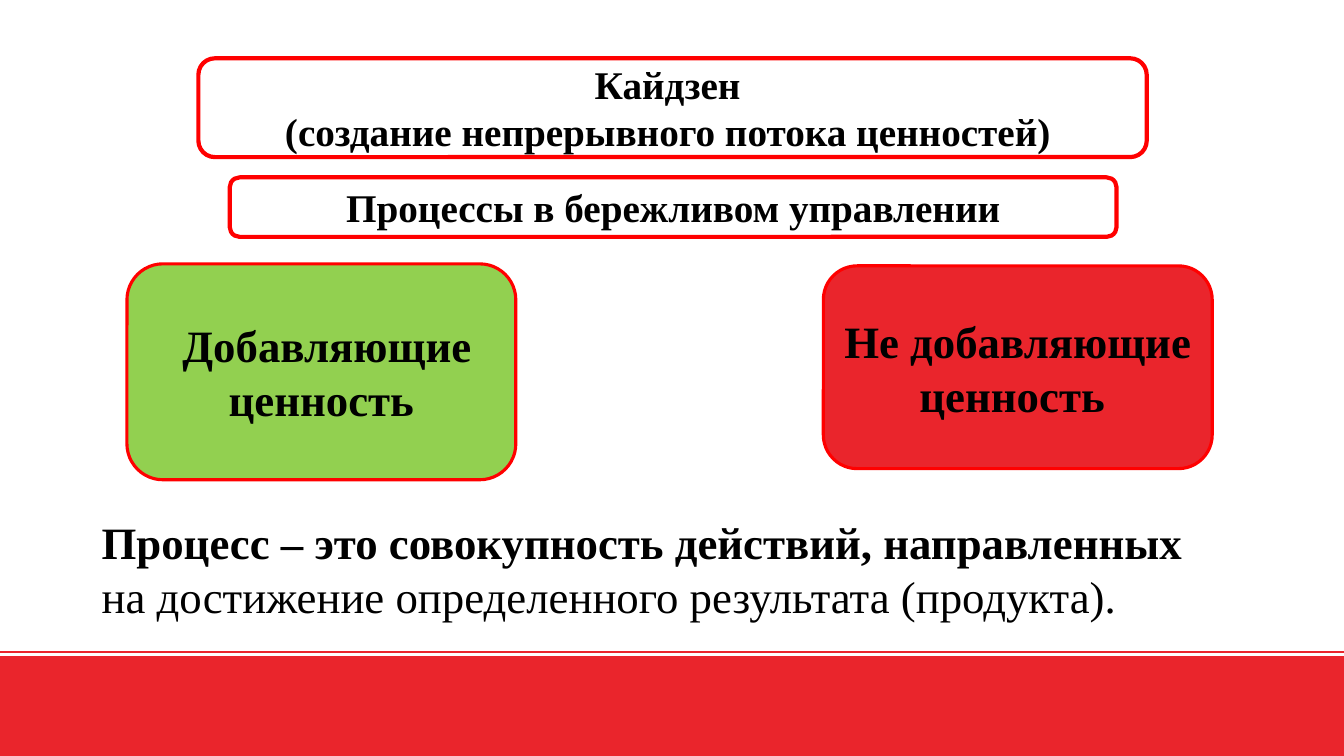
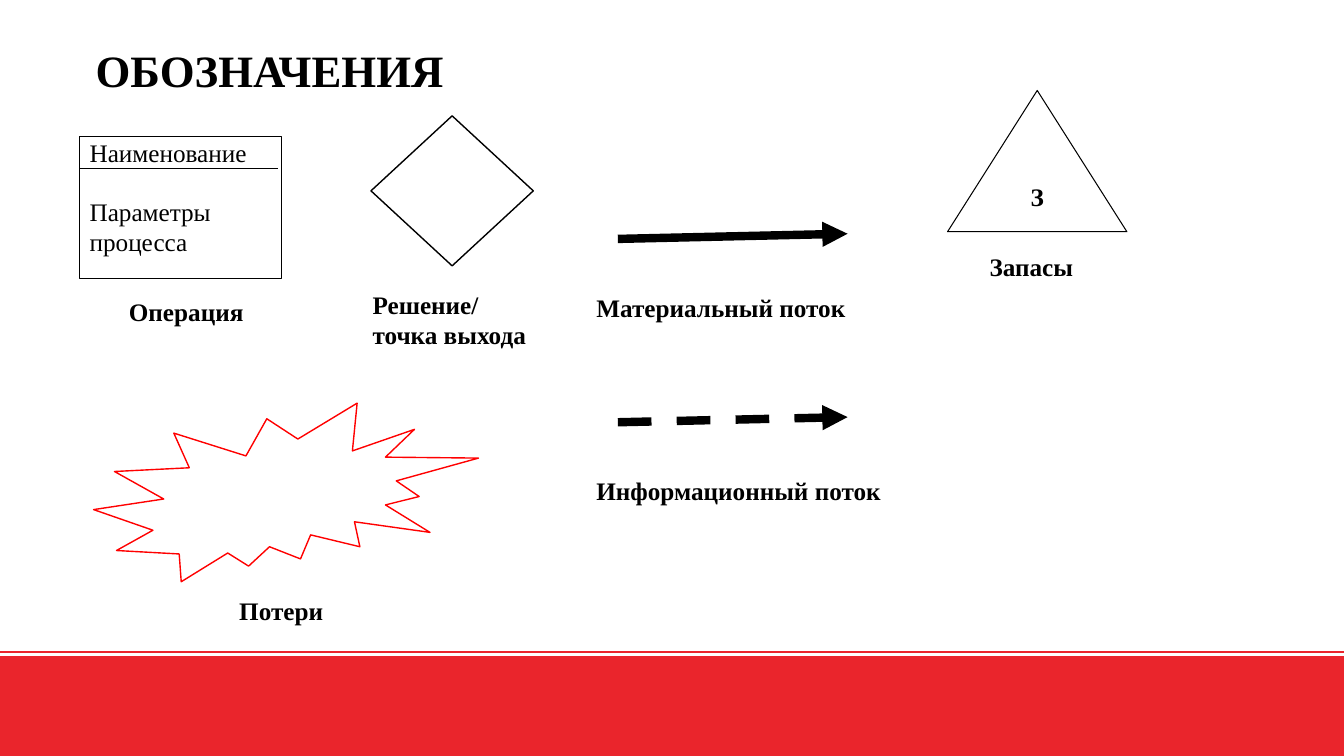
from dataclasses import dataclass
from typing import Any, NamedTuple, Optional

from lxml.etree import SubElement
from pptx import Presentation
from pptx.dml.color import RGBColor
from pptx.enum.dml import MSO_LINE
from pptx.enum.shapes import MSO_CONNECTOR, MSO_SHAPE
from pptx.enum.text import MSO_ANCHOR, MSO_AUTO_SIZE, PP_ALIGN
from pptx.oxml.ns import qn
from pptx.util import Cm, Pt


# Theme
@dataclass(frozen=True)
class Theme:
    font: str = "Times New Roman"
    brand: str = "EA252C"
    accent: str = "FF0000"
    green: str = "92D050"
    black: str = "000000"
    white: str = "FFFFFF"
    big: int = 32
    medium: int = 28
    small: int = 18


T = Theme()
WIDTH, HEIGHT = 33.87, 19.05


# Repeated elements; lengths in centimetres, line widths and type in points
class Rect(NamedTuple):
    left: float
    top: float
    width: float
    height: float


class Para(NamedTuple):
    text: str
    bold: bool = True
    before: float = 0


@dataclass(frozen=True)
class Text:
    paras: tuple[Para, ...]
    size: int = T.small
    align: PP_ALIGN = PP_ALIGN.LEFT
    wrap: bool = False


@dataclass(frozen=True)
class Figure:
    kind: MSO_SHAPE
    rect: Rect
    line: str
    weight: float
    fill: Optional[str] = None
    text: Optional[Text] = None
    frame: tuple[tuple[str, Any], ...] = (("vertical_anchor", MSO_ANCHOR.MIDDLE),)


@dataclass(frozen=True)
class Label:
    rect: Rect
    text: Text


@dataclass(frozen=True)
class Line:
    start: tuple[float, float]
    end: tuple[float, float]
    color: str
    weight: float
    dash: Optional[MSO_LINE] = None
    arrow: bool = False


# Drawing functions
def set_all(target: Any, values: dict[str, Any]) -> None:
    for name, value in values.items():
        setattr(target, name, value)


def write(tf: Any, text: Text) -> None:
    tf.word_wrap = text.wrap
    for i, para in enumerate(text.paras):
        p = tf.add_paragraph() if i else tf.paragraphs[0]
        set_all(p, {"alignment": text.align, "space_before": Pt(para.before)})
        r = p.add_run()
        r.text = para.text
        set_all(r.font, {"name": T.font, "size": Pt(text.size), "bold": para.bold})
        r.font.color.rgb = RGBColor.from_string(T.black)


def draw_figure(shapes: Any, fig: Figure) -> None:
    sp = shapes.add_shape(fig.kind, *map(Cm, fig.rect))
    sp.shadow.inherit = False
    if fig.fill:
        sp.fill.solid()
        sp.fill.fore_color.rgb = RGBColor.from_string(fig.fill)
    else:
        sp.fill.background()
    sp.line.color.rgb = RGBColor.from_string(fig.line)
    sp.line.width = Pt(fig.weight)
    if fig.text:
        set_all(sp.text_frame, dict(fig.frame))
        write(sp.text_frame, fig.text)


def draw_label(shapes: Any, label: Label) -> None:
    tf = shapes.add_textbox(*map(Cm, label.rect)).text_frame
    write(tf, label.text)
    tf.auto_size = MSO_AUTO_SIZE.SHAPE_TO_FIT_TEXT


def draw_line(shapes: Any, line: Line) -> None:
    ends = map(Cm, line.start + line.end)
    cxn = shapes.add_connector(MSO_CONNECTOR.STRAIGHT, *ends)
    cxn.line.color.rgb = RGBColor.from_string(line.color)
    cxn.line.width = Pt(line.weight)
    if line.dash:
        cxn.line.dash_style = line.dash
    sp_pr = cxn._element.spPr
    if line.arrow:
        SubElement(sp_pr.find(qn("a:ln")), qn("a:tailEnd"), type="triangle")
    SubElement(sp_pr, qn("a:effectLst"))


DRAW = {Figure: draw_figure, Label: draw_label, Line: draw_line}


def draw(shapes: Any, *parts: Any) -> None:
    for part in parts:
        DRAW[type(part)](shapes, part)


def new_slide(prs: Any) -> Any:
    """Add a blank slide with the shared footer band."""
    s = prs.slides.add_slide(prs.slide_layouts[6])
    draw(
        s.shapes,
        Line((0, 16.43), (WIDTH, 16.43), T.brand, 1.5),
        Figure(MSO_SHAPE.RECTANGLE, Rect(0, 16.54, WIDTH, 2.51), T.brand, 1, T.brand),
    )
    return s


def rounded(rect: Rect, weight: float, size: int, *lines: str,
            fill: Optional[str] = None) -> Figure:
    text = Text(tuple(map(Para, lines)), size, PP_ALIGN.CENTER, wrap=True)
    return Figure(MSO_SHAPE.ROUNDED_RECTANGLE, rect, T.accent, weight, fill, text)


def caption(rect: Rect, *lines: str, size: int = T.small) -> Label:
    return Label(rect, Text(tuple(map(Para, lines)), size))


# Slide 1: processes
def processes_slide(prs: Any) -> None:
    s = new_slide(prs)
    definition = Text(
        (Para("Процесс – это совокупность действий, направленных"),
         Para("на достижение определенного результата (продукта).", bold=False)),
        T.big, wrap=True)
    draw(
        s.shapes,
        rounded(Rect(5, 1.47, 23.9, 2.49), 3, T.medium,
                "Кайдзен ", "(создание непрерывного потока ценностей) "),
        rounded(Rect(5.79, 4.47, 22.35, 1.5), 3, T.medium,
                "Процессы в бережливом управлении"),
        rounded(Rect(3.2, 6.65, 9.8, 5.44), 2.25, T.big,
                " Добавляющие ценность", fill=T.green),
        rounded(Rect(20.75, 6.7, 9.8, 5.11), 2.25, T.big,
                "Не добавляющие ценность ", fill=T.brand),
        Label(Rect(2.31, 12.85, 30.6, 3), definition),
    )


# Slide 2: legend of symbols
def legend_slide(prs: Any) -> None:
    s = new_slide(prs)
    draw(s.shapes, caption(Rect(2.16, 0.94, 9.32, 1.63), "ОБОЗНАЧЕНИЯ", size=T.big))

    # Operation: box with a header rule
    operation = Text((Para("Наименование", False), Para("Параметры", False, 21),
                      Para("процесса", False)))
    draw(
        s.shapes.add_group_shape().shapes,
        Figure(MSO_SHAPE.RECTANGLE, Rect(2.01, 3.45, 5.08, 3.56), T.black, 0.75,
               T.white, operation,
               (("vertical_anchor", MSO_ANCHOR.TOP), ("margin_top", 0))),
        Line((2.01, 4.24), (7.01, 4.24), T.black, 0.75),
    )

    # Stock, decision and loss symbols
    stock = Text((Para("З"),), align=PP_ALIGN.CENTER)
    draw(
        s.shapes,
        caption(Rect(3, 7.34, 3.43, 1.02), "Операция"),
        Figure(MSO_SHAPE.ISOSCELES_TRIANGLE, Rect(23.88, 2.28, 4.52, 3.56),
               T.black, 0.75, T.white, stock),
        caption(Rect(24.69, 6.2, 2.64, 1.04), "Запасы"),
        Figure(MSO_SHAPE.FLOWCHART_DECISION, Rect(9.35, 2.92, 4.09, 3.78), T.black, 1),
        caption(Rect(9.14, 7.16, 4.42, 1.8), "Решение/", "точка выхода"),
        Figure(MSO_SHAPE.EXPLOSION2, Rect(2.36, 10.16, 9.7, 4.5), T.accent, 1),
        caption(Rect(5.78, 14.88, 2.67, 1.02), "Потери"),
    )

    # Flows: arrow with its caption below
    flows = (("Материальный поток", 6.86, None),
             ("Информационный поток", 7.75, MSO_LINE.DASH))
    for i, (name, width, dash) in enumerate(flows):
        y = 6.02 + 4.62 * i
        draw(
            s.shapes,
            Line((15.57, y), (21.36, y - 0.13), T.black, 6, dash, arrow=True),
            caption(Rect(14.78, y + 1.22, width, 1.02), name),
        )


def main() -> None:
    prs = Presentation()
    set_all(prs, {"slide_width": Cm(WIDTH), "slide_height": Cm(HEIGHT)})
    processes_slide(prs)
    legend_slide(prs)
    prs.save("out.pptx")


if __name__ == "__main__":
    main()
